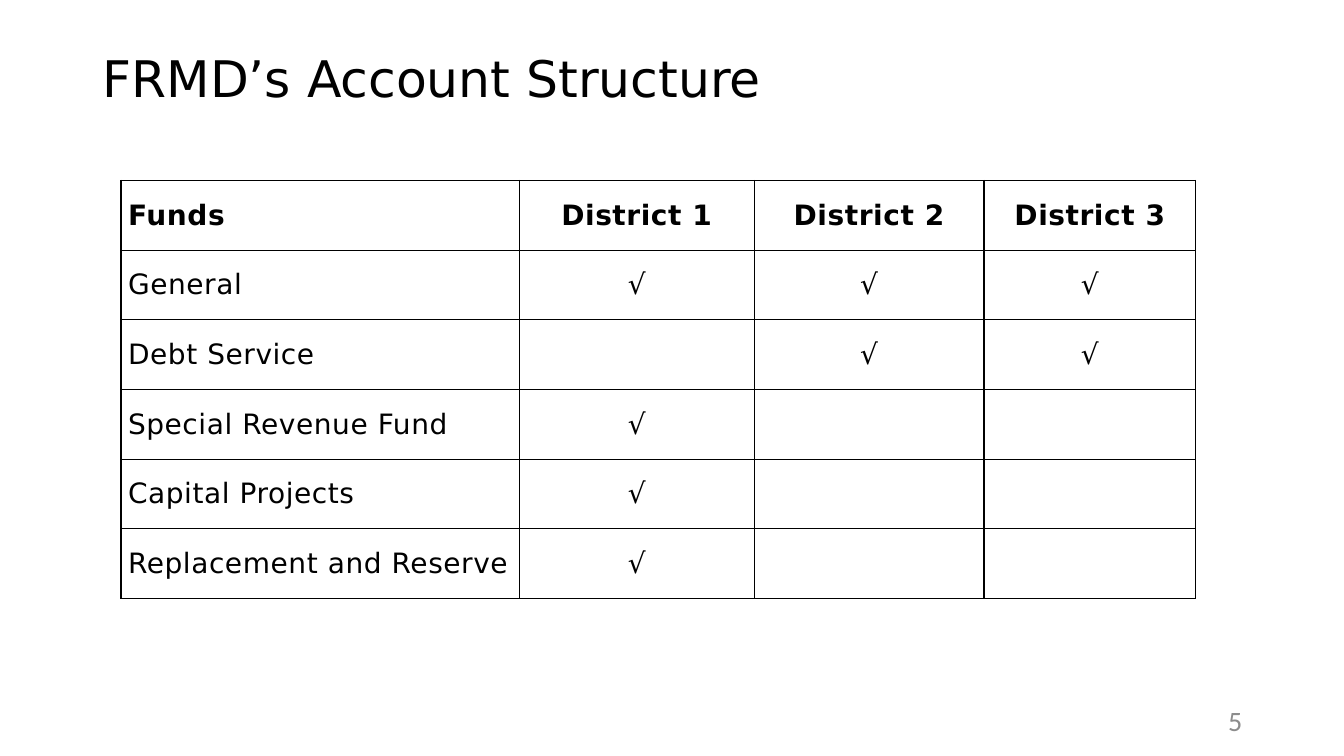
from lxml.etree import SubElement
from pptx import Presentation
from pptx.dml.color import RGBColor
from pptx.enum.text import MSO_ANCHOR, PP_ALIGN
from pptx.oxml.ns import qn
from pptx.util import Inches, Pt

BLACK, WHITE, GRAY = "000000", "FFFFFF", "8C8C8C"
FONT = "DejaVu Sans"
HEADINGS = ["Funds", "District 1", "District 2", "District 3"]
# Each fund with the districts that hold it
FUNDS = [
    ("General", {1, 2, 3}),
    ("Debt Service", {2, 3}),
    ("Special Revenue Fund", {1}),
    ("Capital Projects", {1}),
    ("Replacement and Reserve", {1}),
]
COLUMN_WIDTHS = [3.95, 2.33, 2.28, 2.1]


def color(value):
    return RGBColor.from_string(value)


def add_run(paragraph, text, size, font=FONT, fill=BLACK, bold=False):
    run = paragraph.add_run()
    run.text = text
    run.font.size = Pt(size)
    run.font.name = font
    run.font.bold = bold
    run.font.color.rgb = color(fill)
    return run


def add_text_box(slide, box):
    """Add a middle-anchored text box and return its first paragraph."""
    shape = slide.shapes.add_textbox(*map(Inches, box))
    frame = shape.text_frame
    frame.word_wrap = True
    frame.vertical_anchor = MSO_ANCHOR.MIDDLE
    return frame.paragraphs[0]


def add_title(slide, box):
    paragraph = add_text_box(slide, box)
    paragraph.line_spacing = 0.9
    add_run(paragraph, "FRMD’s Account Structure", 36)


def add_page_number(slide, box):
    paragraph = add_text_box(slide, box)
    paragraph.alignment = PP_ALIGN.RIGHT
    add_run(paragraph, "5", 20, "Calibri", GRAY)


def add_borders(cell):
    properties = cell._tc.get_or_add_tcPr()
    for side in ("lnL", "lnR", "lnT", "lnB"):
        line = SubElement(properties, qn(f"a:{side}"), w=str(Pt(1)))
        fill = SubElement(line, qn("a:solidFill"))
        SubElement(fill, qn("a:srgbClr"), val=BLACK)


def fill_cell(cell, text, centered, bold):
    add_borders(cell)
    cell.fill.solid()
    cell.fill.fore_color.rgb = color(WHITE)
    cell.vertical_anchor = MSO_ANCHOR.MIDDLE
    cell.margin_left = cell.margin_right = Inches(0.07)
    cell.margin_top = cell.margin_bottom = 0
    if not text:
        return
    paragraph = cell.text_frame.paragraphs[0]
    paragraph.alignment = PP_ALIGN.CENTER if centered else PP_ALIGN.LEFT
    paragraph.space_before = paragraph.space_after = Pt(3)
    run = add_run(paragraph, text, 20, bold=bold)
    run.font._element.set("spc", "40")


def add_fund_table(slide, box):
    rows = [HEADINGS]
    for fund, districts in FUNDS:
        rows.append([fund] + ["√" if number in districts else "" for number in (1, 2, 3)])
    table = slide.shapes.add_table(len(rows), len(HEADINGS), *map(Inches, box)).table
    table.horz_banding = False
    for column, width in zip(table.columns, COLUMN_WIDTHS):
        column.width = Inches(width)
    for row_index, texts in enumerate(rows):
        for column_index, text in enumerate(texts):
            cell = table.cell(row_index, column_index)
            fill_cell(cell, text, centered=column_index > 0, bold=row_index == 0)


def main():
    presentation = Presentation()
    presentation.slide_width = Inches(13.33)
    presentation.slide_height = Inches(7.5)
    slide = presentation.slides.add_slide(presentation.slide_layouts[6])
    add_title(slide, (0.92, 0.4, 11.5, 0.81))
    add_page_number(slide, (9.42, 6.95, 3, 0.4))
    add_fund_table(slide, (1.2, 1.79, sum(COLUMN_WIDTHS), 4.15))
    presentation.save("out.pptx")


if __name__ == "__main__":
    main()
